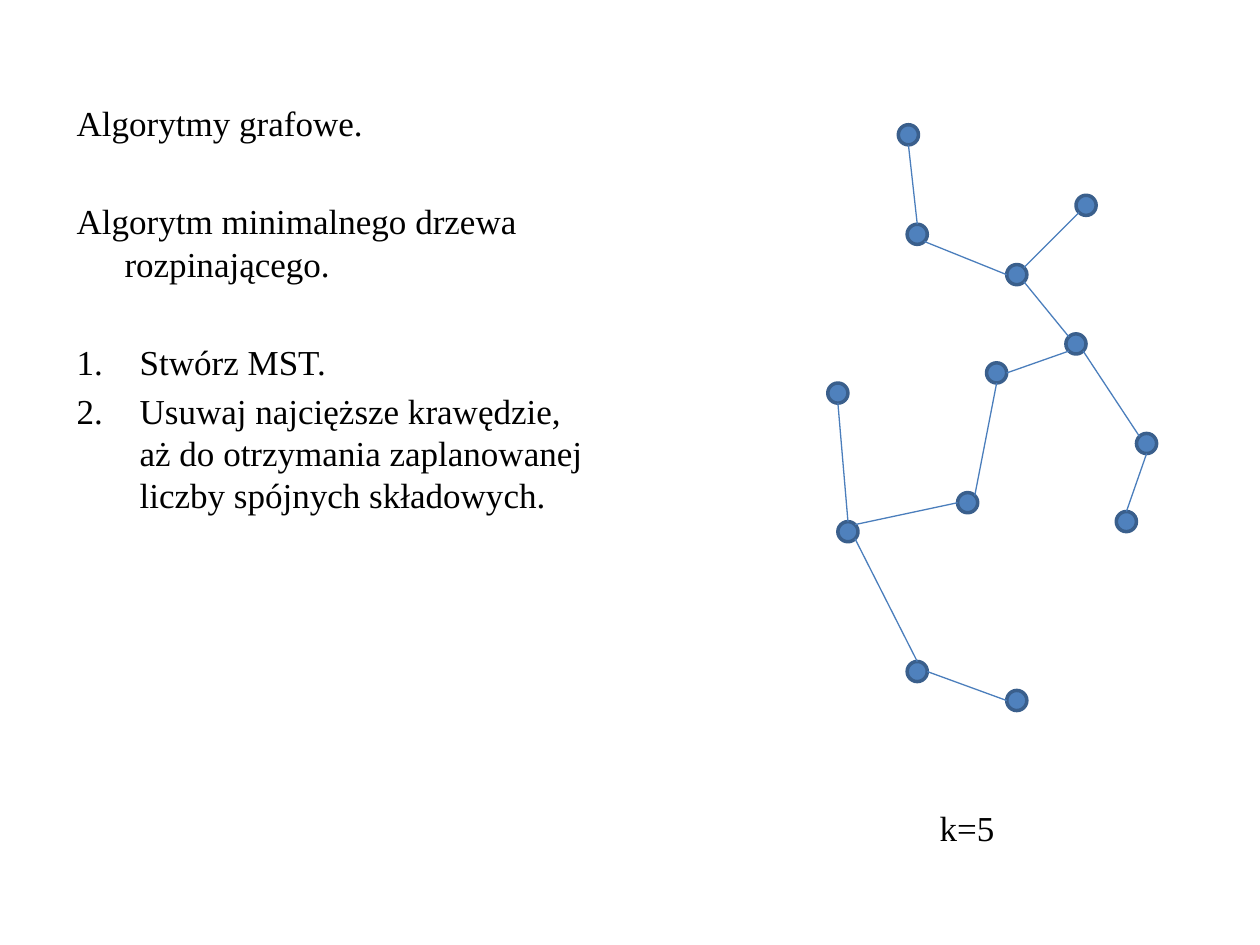
from math import cos, radians, sin

from lxml.etree import SubElement
from pptx import Presentation
from pptx.dml.color import RGBColor
from pptx.enum.shapes import MSO_CONNECTOR, MSO_SHAPE
from pptx.oxml.ns import qn
from pptx.util import Inches, Pt

BLACK = RGBColor(0x00, 0x00, 0x00)
NODE_FILL = RGBColor(0x4F, 0x81, 0xBD)
NODE_LINE = RGBColor(0x3A, 0x5F, 0x8C)
EDGE_LINE = RGBColor(0x4B, 0x7E, 0xBC)

NODE_SIZE = 0.16
SITE_ANGLES = {"E": 0, "SE": 45, "S": 90, "SW": 135,
               "W": 180, "NW": 225, "N": 270, "NE": 315}

NODES = {
    "A": (7.13, 0.99), "B": (7.2, 1.78), "C": (6.57, 3.04),
    "D": (7.99, 2.1), "E": (8.46, 2.65), "F": (7.83, 2.88),
    "G": (7.6, 3.91), "H": (9.02, 3.44), "I": (8.86, 4.06),
    "J": (6.65, 4.14), "K": (8.54, 1.55), "L": (7.99, 5.48),
    "M": (7.2, 5.25),
}
EDGES = [
    ("E", "NW", "D", "SE"), ("I", "N", "H", "S"), ("B", "N", "A", "S"),
    ("F", "E", "E", "SW"), ("M", "E", "L", "W"), ("K", "SW", "D", "NE"),
    ("B", "SE", "D", "W"), ("G", "W", "J", "NE"), ("C", "S", "J", "N"),
    ("J", "SE", "M", "N"), ("H", "NW", "E", "SE"), ("F", "S", "G", "NE"),
]
PARAGRAPHS = [
    ("Algorytmy grafowe.", 4, 0.38, False),
    ("Algorytm minimalnego drzewa rozpinającego.", 32, 0.38, False),
    ("Stwórz MST.", 32, 0.5, True),
    ("Usuwaj najcięższe krawędzie, aż do otrzymania zaplanowanej "
     "liczby spójnych składowych.", 4, 0.5, True),
]


def write_text(paragraph, text, *, font="Times New Roman", size=20, color=BLACK,
               before=0, indent=0, numbered=False):
    run = paragraph.add_run()
    run.text = text
    run.font.name = font
    run.font.size = Pt(size)
    run.font.color.rgb = color
    paragraph.space_before = Pt(before)
    properties = paragraph._p.get_or_add_pPr()
    properties.set("marL", str(Inches(indent)))
    properties.set("indent", str(-Inches(indent)))
    if numbered:
        SubElement(properties, qn("a:buFont"), typeface="+mj-lt")
        SubElement(properties, qn("a:buAutoNum"), type="arabicPeriod")


def site_point(node, site):
    left, top = NODES[node]
    radius = NODE_SIZE / 2
    angle = radians(SITE_ANGLES[site])
    return (Inches(left + radius + radius * cos(angle)),
            Inches(top + radius + radius * sin(angle)))


class GraphSlide:
    def __init__(self, slide):
        self.slide = slide
        self.node_line_width = Pt(2)
        self.edge_line_width = Pt(0.75)

    def text(self, left, top, width, height, paragraphs, wrap=True):
        box = self.slide.shapes.add_textbox(
            Inches(left), Inches(top), Inches(width), Inches(height))
        frame = box.text_frame
        frame.word_wrap = wrap
        for index, (text, before, indent, numbered) in enumerate(paragraphs):
            paragraph = frame.add_paragraph() if index else frame.paragraphs[0]
            write_text(paragraph, text, before=before, indent=indent,
                       numbered=numbered)

    def node(self, group, left, top):
        shape = group.shapes.add_shape(
            MSO_SHAPE.OVAL, Inches(left), Inches(top),
            Inches(NODE_SIZE), Inches(NODE_SIZE))
        shape.shadow.inherit = False
        shape.fill.solid()
        shape.fill.fore_color.rgb = NODE_FILL
        shape.line.color.rgb = NODE_LINE
        shape.line.width = self.node_line_width

    def edge(self, start, end):
        connector = self.slide.shapes.add_connector(
            MSO_CONNECTOR.STRAIGHT, *start, *end)
        connector.line.color.rgb = EDGE_LINE
        connector.line.width = self.edge_line_width
        SubElement(connector._element.spPr, qn("a:effectLst"))


def main():
    presentation = Presentation()
    presentation.slide_width = Inches(10)
    presentation.slide_height = Inches(7.5)
    graph = GraphSlide(
        presentation.slides.add_slide(presentation.slide_layouts[6]))

    graph.text(0.51, 0.76, 4.25, 5.98, PARAGRAPHS)
    group = graph.slide.shapes.add_group_shape()
    for left, top in NODES.values():
        graph.node(group, left, top)
    for start, start_site, end, end_site in EDGES:
        graph.edge(site_point(start, start_site), site_point(end, end_site))
    graph.text(7.36, 6.35, 0.64, 0.44, [("k=5", 0, 0, False)], wrap=False)

    presentation.save("out.pptx")


if __name__ == "__main__":
    main()
